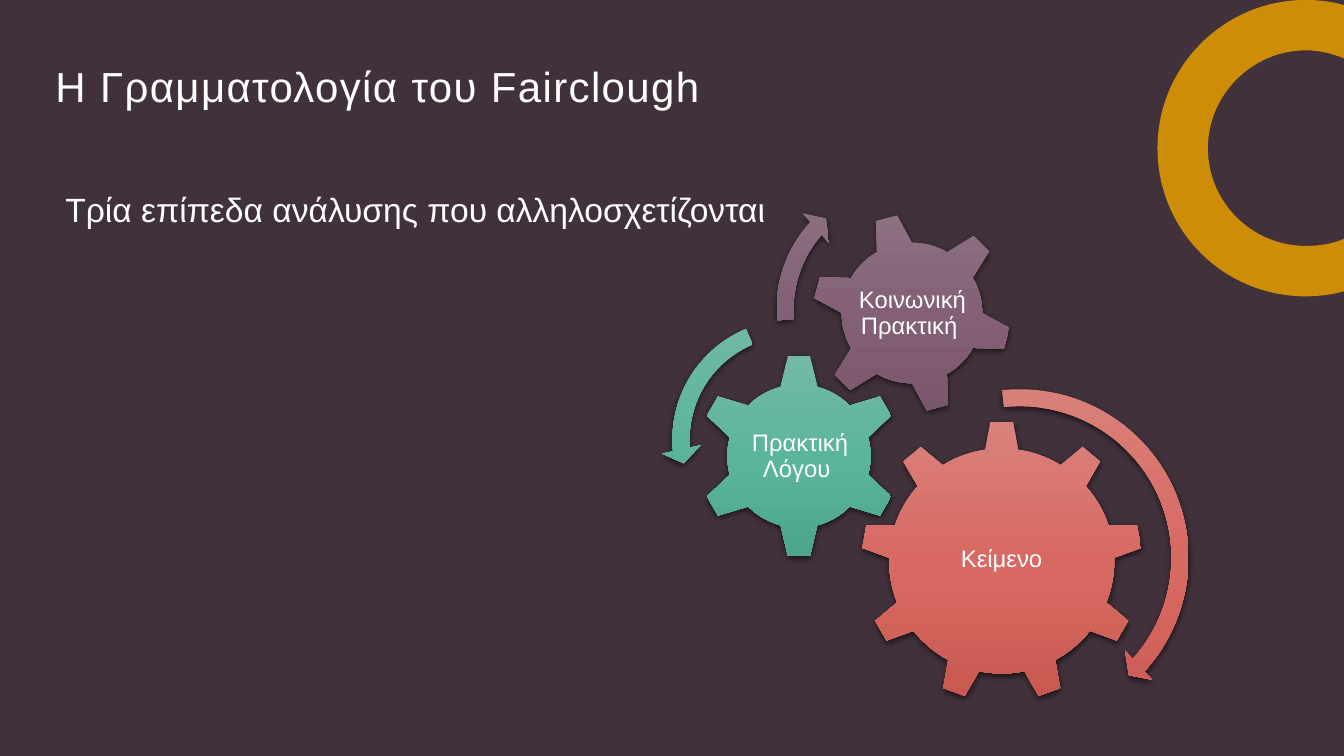
from copy import deepcopy
from dataclasses import dataclass

from lxml import etree
from pptx import Presentation
from pptx.dml.color import RGBColor
from pptx.enum.shapes import MSO_SHAPE
from pptx.enum.text import MSO_ANCHOR, PP_ALIGN
from pptx.oxml.ns import qn
from pptx.util import Inches, Pt

GEAR_6, GEAR_9 = MSO_SHAPE.GEAR_6, MSO_SHAPE.GEAR_9
ARROW, LEFT_ARROW = MSO_SHAPE.CIRCULAR_ARROW, MSO_SHAPE.LEFT_CIRCULAR_ARROW
TOP, MIDDLE = MSO_ANCHOR.TOP, MSO_ANCHOR.MIDDLE
LEFT, CENTER, JUSTIFY = PP_ALIGN.LEFT, PP_ALIGN.CENTER, PP_ALIGN.JUSTIFY

Box = tuple[float, float, float, float]
Gradient = tuple[str, str, str]


@dataclass(frozen=True)
class Theme:
    font: str = "Arial"
    background: str = "41313B"
    text: str = "FFFFFF"
    ring: str = "CD8D06"
    coral: Gradient = ("D9817B", "D86A63", "C75951")
    green: Gradient = ("74B9A5", "5BB59C", "4CA58C")
    mauve: Gradient = ("907586", "846076", "76546A")
    title_size: int = 30
    body_size: int = 24
    label_size: int = 17


@dataclass(frozen=True)
class Level:
    label: str
    label_box: Box
    gear: MSO_SHAPE
    gear_box: Box
    rotation: int
    arrow: MSO_SHAPE
    arrow_box: Box
    bends: tuple[float, ...]
    colors: Gradient


@dataclass(frozen=True)
class Stroke:
    command: str
    points: tuple[tuple[int, int], ...]


THEME = Theme()
LEVELS = (
    Level("Κείμενο", (9.1, 4.83, 1.67, 1.44), GEAR_9, (8.54, 4.17, 2.79, 2.79), 0,
          ARROW, (8.33, 3.75, 3.57, 3.57),
          (0.047, 2.99, 25.259, 158.404, 0.055), THEME.coral),
    Level("Πρακτική Λόγου ", (7.43, 4.03, 1.01, 1), GEAR_6, (6.91, 3.51, 2.03, 2.03), 0,
          LEFT_ARROW, (6.56, 3.06, 2.6, 2.6),
          (0.065, 4.3, 104.891, 148.378, 0.075), THEME.green),
    Level("Κοινωνική Πρακτική ", (8.49, 2.55, 1.12, 1.12), GEAR_6, (8.05, 2.11, 1.99, 1.99), 345,
          ARROW, (7.59, 1.67, 2.8, 2.8),
          (0.06, 3.941, 133.138, 105.082, 0.07), THEME.mauve),
)
RING_LEFT, RING_RIGHT, RING_BOTTOM = 1148, 1333, 294
RING = (
    Stroke("moveTo", ((1295, 0),)),
    Stroke("cubicBezTo", ((1305, 0), (1315, 1), (1325, 3))),
    Stroke("lnTo", ((1333, 5),)),
    Stroke("lnTo", ((1333, 58),)),
    Stroke("cubicBezTo", ((1321, 53), (1309, 50), (1295, 50))),
    Stroke("cubicBezTo", ((1242, 50), (1198, 94), (1198, 147))),
    Stroke("cubicBezTo", ((1198, 201), (1242, 244), (1295, 244))),
    Stroke("cubicBezTo", ((1309, 244), (1321, 242), (1333, 237))),
    Stroke("lnTo", ((1333, 289),)),
    Stroke("lnTo", ((1325, 291),)),
    Stroke("cubicBezTo", ((1315, 293), (1305, 294), (1295, 294))),
    Stroke("cubicBezTo", ((1214, 294), (1148, 229), (1148, 147))),
    Stroke("cubicBezTo", ((1148, 66), (1214, 0), (1295, 0))),
    Stroke("close", ()),
)


def apply(target, values: dict) -> None:
    for name, value in values.items():
        setattr(target, name, value)


def inches(box: Box) -> list:
    return [Inches(length) for length in box]


def write(holder, text: str, size: int, align, anchor, margins: Box, spacing: float = 1.0) -> None:
    frame = holder.text_frame
    left, top, right, bottom = inches(margins)
    apply(frame, {"word_wrap": True, "vertical_anchor": anchor, "margin_left": left,
                  "margin_top": top, "margin_right": right, "margin_bottom": bottom})
    frame.text = text
    paragraph = frame.paragraphs[0]
    apply(paragraph, {"alignment": align, "line_spacing": spacing})
    font = paragraph.runs[0].font
    apply(font, {"name": THEME.font, "size": Pt(size)})
    font.color.rgb = RGBColor.from_string(THEME.text)


def add_title(slide, text: str) -> None:
    title = slide.shapes.title
    left, top, width, height = inches((0.55, 0.21, 7, 2))
    apply(title, {"left": left, "top": top, "width": width, "height": height})
    write(title, text, THEME.title_size, LEFT, TOP, (0, 0.45, 0, 0), 0.9)
    title.text_frame.paragraphs[0].runs[0].font._element.set("spc", "100")


def add_ring(slide) -> None:
    builder = slide.shapes.build_freeform(RING_LEFT, 0, scale=Inches(0.01))
    builder.add_line_segments(
        [(RING_RIGHT, 0), (RING_RIGHT, RING_BOTTOM), (RING_LEFT, RING_BOTTOM)])
    ring = builder.convert_to_shape()
    outline = ring._element.spPr.find(f".//{qn('a:path')}")
    for corner in list(outline):
        outline.remove(corner)
    for stroke in RING:
        segment = etree.SubElement(outline, qn(f"a:{stroke.command}"))
        for x, y in stroke.points:
            etree.SubElement(segment, qn("a:pt"), x=str(x - RING_LEFT), y=str(y))
    ring.shadow.inherit = False
    ring.fill.solid()
    ring.fill.fore_color.rgb = RGBColor.from_string(THEME.ring)
    ring.line.fill.background()


def add_shaded(slide, preset, box: Box, colors: Gradient):
    shape = slide.shapes.add_shape(preset, *inches(box))
    shape.line.fill.background()
    shape.fill.gradient()
    shape.fill.gradient_angle = 270
    properties = shape._element.spPr
    properties.find(qn("a:gradFill")).set("rotWithShape", "0")
    stop_list = properties.find(f".//{qn('a:gsLst')}")
    stop_list.append(deepcopy(stop_list[0]))
    for index, (stop, color) in enumerate(zip(shape.fill.gradient_stops, colors)):
        stop.color.rgb = RGBColor.from_string(color)
        stop.position = index / 2

    shape.shadow.inherit = False
    shadow = etree.SubElement(
        properties.find(qn("a:effectLst")), qn("a:outerShdw"),
        blurRad=str(Pt(4.5)), dist=str(Pt(1.5)), dir="5400000", algn="ctr", rotWithShape="0")
    black = etree.SubElement(shadow, qn("a:srgbClr"), val="000000")
    etree.SubElement(black, qn("a:alpha"), val="63000")
    return shape


def add_gear(slide, level: Level) -> None:
    gear = add_shaded(slide, level.gear, level.gear_box, level.colors)
    gear.rotation = level.rotation
    label = slide.shapes.add_textbox(*inches(level.label_box))
    write(label, level.label, THEME.label_size, CENTER, MIDDLE, (0.02,) * 4, 0.9)


def add_arrow(slide, level: Level) -> None:
    arrow = add_shaded(slide, level.arrow, level.arrow_box, level.colors)
    for index, bend in enumerate(level.bends):
        arrow.adjustments[index] = bend


def main() -> None:
    deck = Presentation()
    apply(deck, {"slide_width": Inches(13.33), "slide_height": Inches(7.5)})
    slide = deck.slides.add_slide(deck.slide_layouts[5])
    background = slide.background.fill
    background.solid()
    background.fore_color.rgb = RGBColor.from_string(THEME.background)

    add_ring(slide)
    add_title(slide, "Η Γραμματολογία του Fairclough")
    statement = slide.shapes.add_textbox(*inches((0.55, 1.81, 8.75, 1.26)))
    write(statement, "Τρία επίπεδα ανάλυσης που αλληλοσχετίζονται ", THEME.body_size,
          JUSTIFY, TOP, (0.1, 0.06, 0.1, 0.05))
    for level in LEVELS:
        add_gear(slide, level)
    for level in LEVELS:
        add_arrow(slide, level)
    deck.save("out.pptx")


if __name__ == "__main__":
    main()
